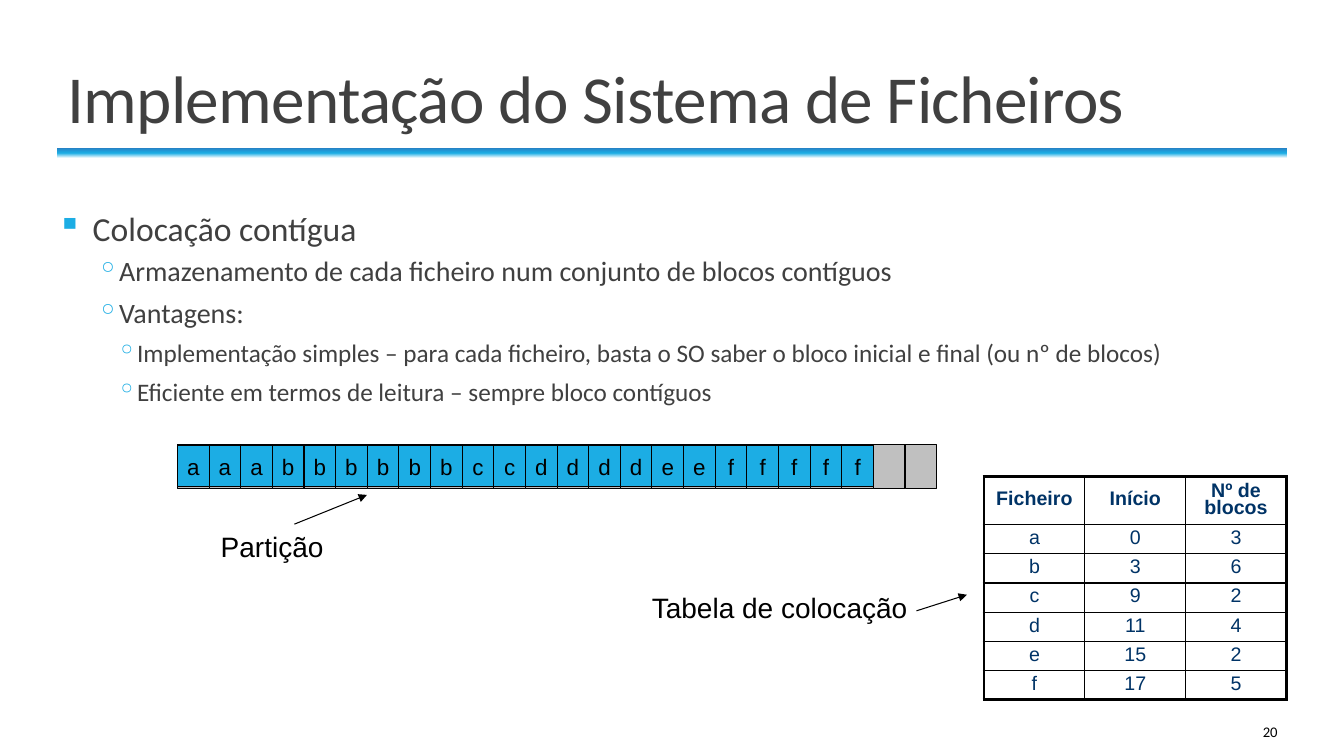
"""Build the slide on contiguous file allocation."""
from copy import deepcopy

from lxml import etree
from pptx import Presentation
from pptx.dml.color import RGBColor
from pptx.enum.shapes import MSO_CONNECTOR, MSO_SHAPE
from pptx.enum.text import MSO_ANCHOR, PP_ALIGN
from pptx.oxml.ns import qn
from pptx.util import Inches, Pt

RECTANGLE = MSO_SHAPE.RECTANGLE
STRAIGHT = MSO_CONNECTOR.STRAIGHT
LEFT, CENTER, RIGHT = PP_ALIGN.LEFT, PP_ALIGN.CENTER, PP_ALIGN.RIGHT
TOP, MIDDLE, BOTTOM = MSO_ANCHOR.TOP, MSO_ANCHOR.MIDDLE, MSO_ANCHOR.BOTTOM
COLORS = {
    "black": "000000", "white": "FFFFFF", "text": "404040", "table": "003366",
    "used": "1CADE4", "free": "C0C0C0", "deep": "2683C6",
}


def rgb(name):
    return RGBColor.from_string(COLORS[name])


def write(frame, text, size=20, font="Arial", color="black", bold=False,
          align=LEFT, anchor=TOP, wrap=True, line=None, new=False):
    frame.word_wrap = wrap
    frame.vertical_anchor = anchor
    para = frame.add_paragraph() if new else frame.paragraphs[0]
    para.alignment = align
    para.line_spacing = line
    span = para.add_run()
    span.text = text
    span.font.size = Pt(size)
    span.font.name = font
    span.font.bold = bold
    span.font.color.rgb = rgb(color)
    return para


deck = Presentation()
deck.slide_width, deck.slide_height = Inches(13.33), Inches(7.5)
page = deck.slides.add_slide(deck.slide_layouts[5])
shapes = page.shapes

rule = shapes.add_shape(RECTANGLE, Inches(0.57), Inches(1.47), Inches(12.2), Inches(0.1))
rule.shadow.inherit = False
rule.line.fill.background()
rule.fill.gradient()
rule.fill.gradient_angle = 90
stop_list = rule._element.find(".//" + qn("a:gsLst"))
stop_list.append(deepcopy(stop_list[-1]))
for stop, position, color in zip(rule.fill.gradient_stops, (0, 0.5, 1), ("white", "used", "deep")):
    stop.position = position
    stop.color.rgb = rgb(color)

title = shapes.title
title.left, title.top, title.width, title.height = (
    Inches(0.57), Inches(0.29), Inches(12.2), Inches(1.12))
heading = write(title.text_frame, "Implementação do Sistema de Ficheiros", size=48,
                font="Calibri", color="text", anchor=BOTTOM, line=0.85)
heading.runs[0].font._element.set("spc", "-50")

LEVELS = [
    {"size": 24, "margin": 0.35, "indent": -0.35, "before": 12, "after": 2, "bullet": "▪"},
    {"size": 20, "margin": 0.59, "indent": -0.2, "before": 2, "after": 4, "bullet": "◦"},
    {"size": 18, "margin": 0.79, "indent": -0.2, "before": 2, "after": 4, "bullet": "◦"},
]
POINTS = [
    (0, "Colocação contígua"),
    (1, "Armazenamento de cada ficheiro num conjunto de blocos contíguos"),
    (1, "Vantagens:"),
    (2, "Implementação simples – para cada ficheiro, basta o SO saber o bloco inicial e final "
        "(ou nº de blocos)"),
    (2, "Eficiente em termos de leitura – sempre bloco contíguos"),
]
body = shapes.add_textbox(Inches(0.57), Inches(2.01), Inches(12.2), Inches(4.82)).text_frame
body.margin_left = body.margin_right = 0
for index, (level, text) in enumerate(POINTS):
    style = LEVELS[level]
    para = write(body, text, size=style["size"], font="Calibri", color="text", new=index > 0)
    para.level = level
    properties = para._p.get_or_add_pPr()
    properties.set("marL", str(Inches(style["margin"])))
    properties.set("indent", str(Inches(style["indent"])))
    bullet_color = etree.SubElement(properties, qn("a:buClr"))
    etree.SubElement(bullet_color, qn("a:srgbClr"), val=COLORS["used"])
    etree.SubElement(properties, qn("a:buChar"), char=style["bullet"])
    para.space_before = Pt(style["before"])
    para.space_after = Pt(style["after"])

FILES = [("a", 0, 3), ("b", 3, 6), ("c", 9, 2), ("d", 11, 4), ("e", 15, 2), ("f", 17, 5)]
ROWS = [("Ficheiro", "Início", "Nº de blocos")] + FILES
table = shapes.add_table(len(ROWS), 3, Inches(9.76), Inches(4.73), Inches(3), Inches(2.19)).table
table.first_row = table.horz_banding = False
for column in table.columns:
    column.width = Inches(1)
for r, values in enumerate(ROWS):
    table.rows[r].height = Inches(0.29 if r else 0.47)
    for c, value in enumerate(values):
        cell = table.cell(r, c)
        cell.vertical_anchor = MIDDLE
        write(cell.text_frame, str(value), size=14, color="table", bold=r == 0,
              align=CENTER, anchor=None, line=0.8)
        outer_edges = {"L": c == 0, "R": c == 2, "T": r == 0, "B": r == len(ROWS) - 1}
        for side, outer in outer_edges.items():
            border = etree.SubElement(cell._tc.get_or_add_tcPr(), qn("a:ln" + side),
                                      w=str(Pt(2.25 if outer else 1)))
            paint = etree.SubElement(border, qn("a:solidFill"))
            etree.SubElement(paint, qn("a:srgbClr"), val=COLORS["black"])
        cell.fill.background()

LABELS = [
    ("Partição", 2.09, 5.2, 1.25, 0.43, {}),
    ("Tabela de colocação", 5.68, 5.81, 3.42, 0.43, {"align": RIGHT}),
    ("20", 10.83, 7.06, 1.94, 0.4,
     {"size": 10.5, "font": "Calibri", "align": RIGHT, "anchor": MIDDLE}),
]
for text, left, top, width, height, style in LABELS:
    box = shapes.add_textbox(Inches(left), Inches(top), Inches(width), Inches(height))
    write(box.text_frame, text, **style)

for ends in [(9.09, 6.06, 9.59, 5.9), (2.92, 5.2, 3.64, 4.91)]:
    arrow = shapes.add_connector(STRAIGHT, *map(Inches, ends))
    arrow.line.color.rgb = rgb("black")
    arrow.line.width = Pt(0.75)
    etree.SubElement(arrow.line._get_or_add_ln(), qn("a:tailEnd"), type="triangle")
    etree.SubElement(arrow._element.spPr, qn("a:effectLst"))

BLOCK_COUNT = 24
PARTITION_LEFT = 1.76
BLOCK_WIDTH = 7.53 / BLOCK_COUNT
runs_of_blocks = [("", 0, BLOCK_COUNT, "free", 4.41, 0.44)]
runs_of_blocks += [(*file, "used", 4.42, 0.41) for file in FILES]
for name, start, count, color, top, height in runs_of_blocks:
    group = shapes.add_group_shape()
    for position in range(start, start + count):
        block = group.shapes.add_shape(
            RECTANGLE, Inches(PARTITION_LEFT + position * BLOCK_WIDTH), Inches(top),
            Inches(BLOCK_WIDTH), Inches(height))
        block.shadow.inherit = False
        block.fill.solid()
        block.fill.fore_color.rgb = rgb(color)
        block.line.color.rgb = rgb("black")
        block.line.width = Pt(0.75)
        if name:
            write(block.text_frame, name, size=16, align=CENTER, anchor=MIDDLE, wrap=False)

deck.save("out.pptx")
